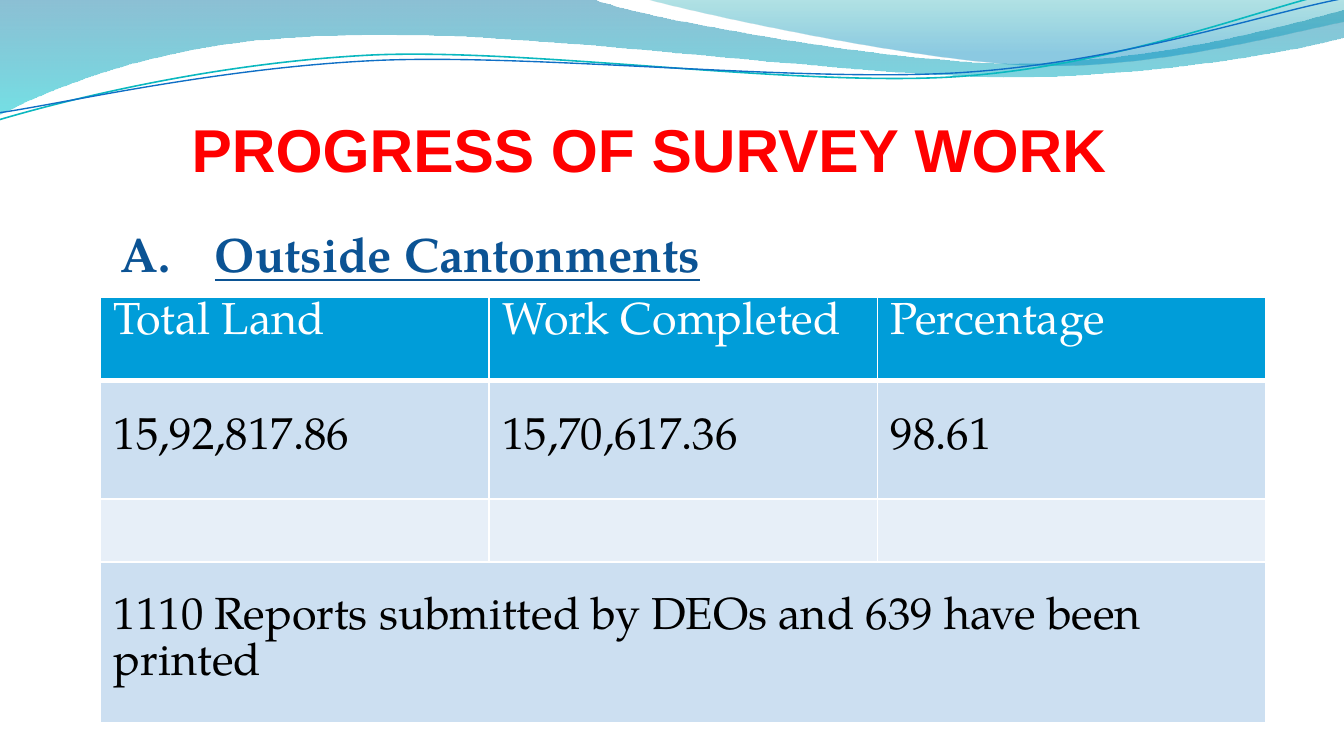
from lxml.etree import SubElement
from pptx import Presentation
from pptx.dml.color import RGBColor
from pptx.enum.text import MSO_ANCHOR, MSO_AUTO_SIZE, PP_ALIGN
from pptx.oxml.ns import qn
from pptx.util import Cm, Pt

RED = RGBColor(0xFF, 0x00, 0x00)
NAVY = RGBColor(0x0B, 0x53, 0x94)
WHITE = RGBColor(0xFF, 0xFF, 0xFF)
BLACK = RGBColor(0x00, 0x00, 0x00)
HEADER_BLUE = RGBColor(0x00, 0x9D, 0xD9)
BAND_DARK = RGBColor(0xCC, 0xDF, 0xF1)
BAND_LIGHT = RGBColor(0xE7, 0xEF, 0xF8)
DEEP_BLUE = RGBColor(0x00, 0x74, 0xA1)
CYAN = RGBColor(0x00, 0xC6, 0xCF)
TEAL = RGBColor(0x00, 0xA1, 0xA9)
SKY = RGBColor(0x00, 0x8B, 0xBF)
LINE_TEAL = RGBColor(0x0A, 0xB8, 0xBF)
LINE_BLUE = RGBColor(0x0F, 0x6F, 0xC6)
SERIF = "TeX Gyre Pagella"
UNITS_PER_CM = 100

presentation = Presentation()
presentation.slide_width = Cm(25.4)
presentation.slide_height = Cm(14.29)
slide = presentation.slides.add_slide(presentation.slide_layouts[5])


def add_curve(start, segments, close):
    corners = [[round(value * UNITS_PER_CM) for value in point]
               for point in [start] + [segment[-2:] for segment in segments]]
    builder = slide.shapes.build_freeform(*corners[0], scale=Cm(1) / UNITS_PER_CM)
    builder.add_line_segments(corners[1:], close=close)
    curve = builder.convert_to_shape()
    curve.shadow.inherit = False
    left, top = min(x for x, y in corners), min(y for x, y in corners)
    for line, segment in zip(list(curve.element.iter(qn("a:lnTo"))), segments):
        if len(segment) == 6:
            bezier = SubElement(line.getparent(), qn("a:cubicBezTo"))
            for x, y in zip(segment[::2], segment[1::2]):
                SubElement(bezier, qn("a:pt"), x=str(round(x * UNITS_PER_CM) - left),
                           y=str(round(y * UNITS_PER_CM) - top))
            line.getparent().replace(line, bezier)
    return curve


def format_font(font, color, **values):
    for name, value in values.items():
        setattr(font, name, value)
    font.color.rgb = color


waves = [
    ((0, 0),
     [(11.18, -0.03), (12.09, 0.33, 16.87, 1.19, 19.25, 1.19),
      (21.67, 1.19, 24.33, 0.48, 25.4, 0.18), (25.43, 0.69),
      (24.97, 0.84, 22.1, 1.45, 18.95, 1.45), (15.8, 1.42, 9.7, 0.53, 6.53, 0.66),
      (3.28, 0.69, 1.17, 1.57, -0.03, 2.16)],
     [(0, DEEP_BLUE, 45), (1, CYAN, 55)]),
    ((12.17, -0.03),
     [(12.93, 0.2, 17.32, 1.17, 19.53, 1.24),
      (21.74, 1.32, 24.41, 0.61, 25.4, 0.41), (25.4, 0)],
     [(0, TEAL, 30), (0.8, SKY, 45)]),
]
for start, segments, gradient in waves:
    wave = add_curve(start, segments, True)
    wave.line.fill.background()
    wave.fill.gradient()
    wave.fill.gradient_angle = 270
    for stop, (position, color, opacity) in zip(wave.fill.gradient_stops, gradient):
        stop.position = position
        stop.color.rgb = color
    for tone, (position, color, opacity) in zip(wave.element.iter(qn("a:srgbClr")), gradient):
        SubElement(tone, qn("a:alpha"), val=str(opacity * 1000))

ripples = [
    ((0, 2.26),
     [(1.22, 1.9, 4.01, 1.19, 7.04, 1.04), (10.06, 0.91, 15.04, 1.65, 18.08, 1.45),
      (21.16, 1.24, 23.85, 0.15, 25.35, -0.18)], LINE_TEAL, 0.85),
    ((0, 2.13),
     [(1.19, 1.96, 4.17, 1.27, 7.19, 1.14), (10.24, 1.02, 15.16, 1.57, 18.21, 1.37),
      (21.23, 1.17, 23.9, 0.25, 25.4, -0.03)], LINE_BLUE, 0.75),
]
for start, segments, color, width in ripples:
    ripple = add_curve(start, segments, False)
    ripple.fill.background()
    ripple.line.color.rgb = color
    ripple.line.width = Pt(width)

title = slide.shapes.title
title_place = {"left": Cm(0.84), "top": Cm(2.23), "width": Cm(22.86), "height": Cm(1.27)}
for name, value in title_place.items():
    setattr(title, name, value)
title_frame = {"margin_left": 0, "margin_top": Cm(0.13), "margin_right": 0, "margin_bottom": 0,
               "vertical_anchor": MSO_ANCHOR.BOTTOM, "word_wrap": True,
               "auto_size": MSO_AUTO_SIZE.NONE}
for name, value in title_frame.items():
    setattr(title.text_frame, name, value)
heading = title.text_frame.paragraphs[0]
heading.alignment = PP_ALIGN.CENTER
heading_run = heading.add_run()
heading_run.text = "PROGRESS OF SURVEY WORK"
format_font(heading_run.font, RED, name="Arial", size=Pt(32.4), bold=True)

section = slide.shapes.add_textbox(Cm(1.27), Cm(4.12), Cm(22.86), Cm(1.27))
section.text_frame.word_wrap = True
section_line = section.text_frame.paragraphs[0]
section_line.space_before = Pt(5.2)
section_format = section_line._p.get_or_add_pPr()
section_format.set("marL", "0")
section_format.set("indent", str(Cm(0.76)))
SubElement(SubElement(section_format, qn("a:tabLst")), qn("a:tab"), pos=str(Cm(3.3)), algn="l")
for text, underline in [("A. \t", False), ("Outside Cantonments", True)]:
    run = section_line.add_run()
    run.text = text
    format_font(run.font, NAVY, name=SERIF, size=Pt(25.9), bold=True, underline=underline)

rows = [
    (1.58, HEADER_BLUE, WHITE, MSO_ANCHOR.TOP, ["Total Land", "Work Completed", "Percentage"]),
    (2.24, BAND_DARK, BLACK, MSO_ANCHOR.MIDDLE, ["15,92,817.86", "15,70,617.36", "98.61"]),
    (1.19, BAND_LIGHT, BLACK, MSO_ANCHOR.TOP, ["", "", ""]),
    (3.05, BAND_DARK, BLACK, MSO_ANCHOR.MIDDLE,
     ["1110 Reports submitted by DEOs and 639 have been printed", "", ""]),
]
progress = slide.shapes.add_table(len(rows), 3, Cm(1.9), Cm(5.61), Cm(22.02), Cm(8.06)).table
for column in progress.columns:
    column.width = Cm(7.34)
for row_index, (height, fill, color, anchor, texts) in enumerate(rows):
    progress.rows[row_index].height = Cm(height)
    for column_index, text in enumerate(texts):
        cell = progress.cell(row_index, column_index)
        cell.margin_top = cell.margin_bottom = Cm(0.1)
        cell.vertical_anchor = anchor
        for side in ("lnL", "lnR", "lnT", "lnB"):
            under_header = (row_index, side) in [(0, "lnB"), (1, "lnT")]
            border = SubElement(cell._tc.get_or_add_tcPr(), qn("a:" + side),
                                w=str(Pt(3 if under_header else 1)))
            SubElement(SubElement(border, qn("a:solidFill")), qn("a:srgbClr"), val=str(WHITE))
        cell.fill.solid()
        cell.fill.fore_color.rgb = fill
        if text:
            run = cell.text_frame.paragraphs[0].add_run()
            run.text = text
            format_font(run.font, color, name=SERIF, size=Pt(24), bold=False)
progress.cell(3, 0).merge(progress.cell(3, 2))

presentation.save("out.pptx")
